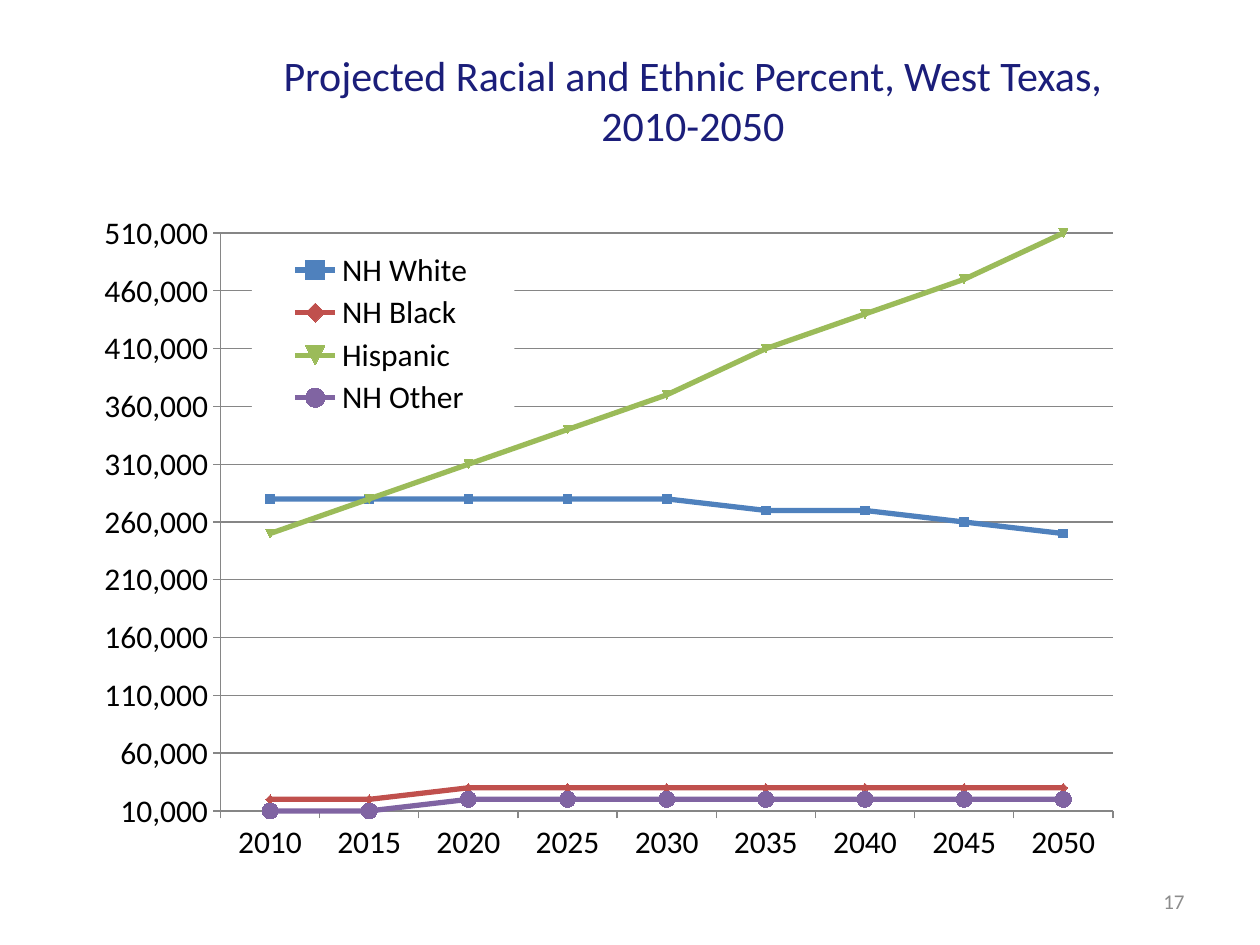
from dataclasses import dataclass

from lxml.etree import SubElement
from pptx import Presentation
from pptx.chart.data import CategoryChartData
from pptx.dml.color import RGBColor
from pptx.enum.chart import XL_CHART_TYPE as ChartType
from pptx.enum.chart import XL_LEGEND_POSITION as LegendPos
from pptx.enum.chart import XL_MARKER_STYLE as Marker
from pptx.enum.chart import XL_TICK_MARK as Tick
from pptx.enum.text import MSO_ANCHOR as Anchor
from pptx.enum.text import PP_ALIGN as Align
from pptx.oxml.ns import qn
from pptx.util import Pt


@dataclass(frozen=True)
class Theme:
    font: str = "Calibri"
    title: str = "1B1E7A"
    muted: str = "8C8C8C"
    ink: str = "000000"
    paper: str = "FFFFFF"
    grid: str = "868686"
    title_size: int = 24
    chart_size: int = 18
    number_size: int = 12
    series_width: float = 3
    grid_width: float = 0.75


def rgb(color):
    return RGBColor.from_string(color)


def place(part, x, y, w, h, inner=False):
    """Give a plot area or legend a manual layout, in fractions of the chart."""
    layout = part.find(qn("c:layout"))
    if layout is None:
        layout = SubElement(part, qn("c:layout"))
        # The layout follows legendPos in a legend and comes first in a plot area
        part.insert(0 if inner else 1, layout)
    manual = SubElement(layout, qn("c:manualLayout"))
    settings = {"layoutTarget": "inner"} if inner else {}
    settings |= {"xMode": "edge", "yMode": "edge", "x": x, "y": y, "w": w, "h": h}
    for tag, value in settings.items():
        SubElement(manual, qn(f"c:{tag}")).set("val", str(value))


class SlideBuilder:
    def __init__(self, slide, theme):
        self.slide = slide
        self.theme = theme

    def text(self, words, box, size, color, align):
        frame = self.slide.shapes.add_textbox(*map(Pt, box)).text_frame
        frame.word_wrap = True
        frame.vertical_anchor = Anchor.MIDDLE
        paragraph = frame.paragraphs[0]
        paragraph.alignment = align
        run = paragraph.add_run()
        run.text = words
        self.style_font(run.font, size, color)

    def style_font(self, font, size, color):
        font.name = self.theme.font
        font.size = Pt(size)
        font.color.rgb = rgb(color)

    def style_line(self, line, color, width):
        line.color.rgb = rgb(color)
        line.width = Pt(width)

    def style_axis(self, axis):
        axis.major_tick_mark = Tick.OUTSIDE
        axis.minor_tick_mark = Tick.NONE
        self.style_line(axis.format.line, self.theme.grid, self.theme.grid_width)

    def line_chart(self, years, groups, box):
        theme = self.theme
        data = CategoryChartData(number_format="#,##0")
        data.categories = years
        for name, _, people, _ in groups:
            data.add_series(name, people)
        chart = self.slide.shapes.add_chart(
            ChartType.LINE_MARKERS, *map(Pt, box), data).chart
        chart.has_title = False
        self.style_font(chart.font, theme.chart_size, theme.ink)
        place(chart.plots[0]._element.getparent(), 0.13, 0.05, 0.85, 0.86, inner=True)

        # Axes
        self.style_axis(chart.category_axis)
        population = chart.value_axis
        self.style_axis(population)
        population.minimum_scale = 10000
        population.maximum_scale = 510000
        population.major_unit = 50000
        population.tick_labels.number_format = "#,##0"
        population.tick_labels.number_format_is_linked = False
        population.has_major_gridlines = True
        self.style_line(population.major_gridlines.format.line,
                        theme.grid, theme.grid_width)

        # Series
        chart.plots[0].vary_by_categories = False
        for series, (_, color, _, marker) in zip(chart.plots[0].series, groups):
            series.smooth = False
            self.style_line(series.format.line, color, theme.series_width)
            style, size = marker
            if style is not None:
                series.marker.style = style
            series.marker.size = size
            series.marker.format.fill.solid()
            series.marker.format.fill.fore_color.rgb = rgb(color)
            series.marker.format.line.color.rgb = rgb(color)

        # Legend, on a white panel over the plot
        chart.has_legend = True
        legend = chart.legend
        legend.position = LegendPos.LEFT
        legend.include_in_layout = False
        legend.font.size = Pt(theme.chart_size)
        place(legend._element, 0.16, 0.07, 0.25, 0.26)
        panel = legend._element.makeelement(qn("c:spPr"))
        fill = SubElement(panel, qn("a:solidFill"))
        SubElement(fill, qn("a:srgbClr")).set("val", theme.paper)
        legend._element.find(qn("c:txPr")).addprevious(panel)


AUTO_MARKER = (None, 5)
YEARS = [str(year) for year in range(2010, 2051, 5)]
GROUPS = [
    ("NH White", "4F81BD",
     [280000, 280000, 280000, 280000, 280000, 270000, 270000, 260000, 250000],
     AUTO_MARKER),
    ("NH Black ", "C0504D", [20000] * 2 + [30000] * 7, AUTO_MARKER),
    ("Hispanic ", "9BBB59",
     [250000, 280000, 310000, 340000, 370000, 410000, 440000, 470000, 510000],
     AUTO_MARKER),
    ("NH Other ", "8064A2", [10000] * 2 + [20000] * 7, (Marker.CIRCLE, 9)),
]


def main():
    deck = Presentation()
    deck.slide_width, deck.slide_height = Pt(720), Pt(540)
    theme = Theme()
    builder = SlideBuilder(deck.slides.add_slide(deck.slide_layouts[6]), theme)

    # Title
    builder.text("Projected Racial and Ethnic Percent, West Texas, 2010-2050",
                 (126, 18, 540, 78), theme.title_size, theme.title, Align.CENTER)
    # Slide number
    builder.text("17", (516, 500.5, 168, 28.75),
                 theme.number_size, theme.muted, Align.RIGHT)
    # Population by group
    builder.line_chart(YEARS, GROUPS, (48, 114, 600, 384))

    deck.save("out.pptx")


if __name__ == "__main__":
    main()
